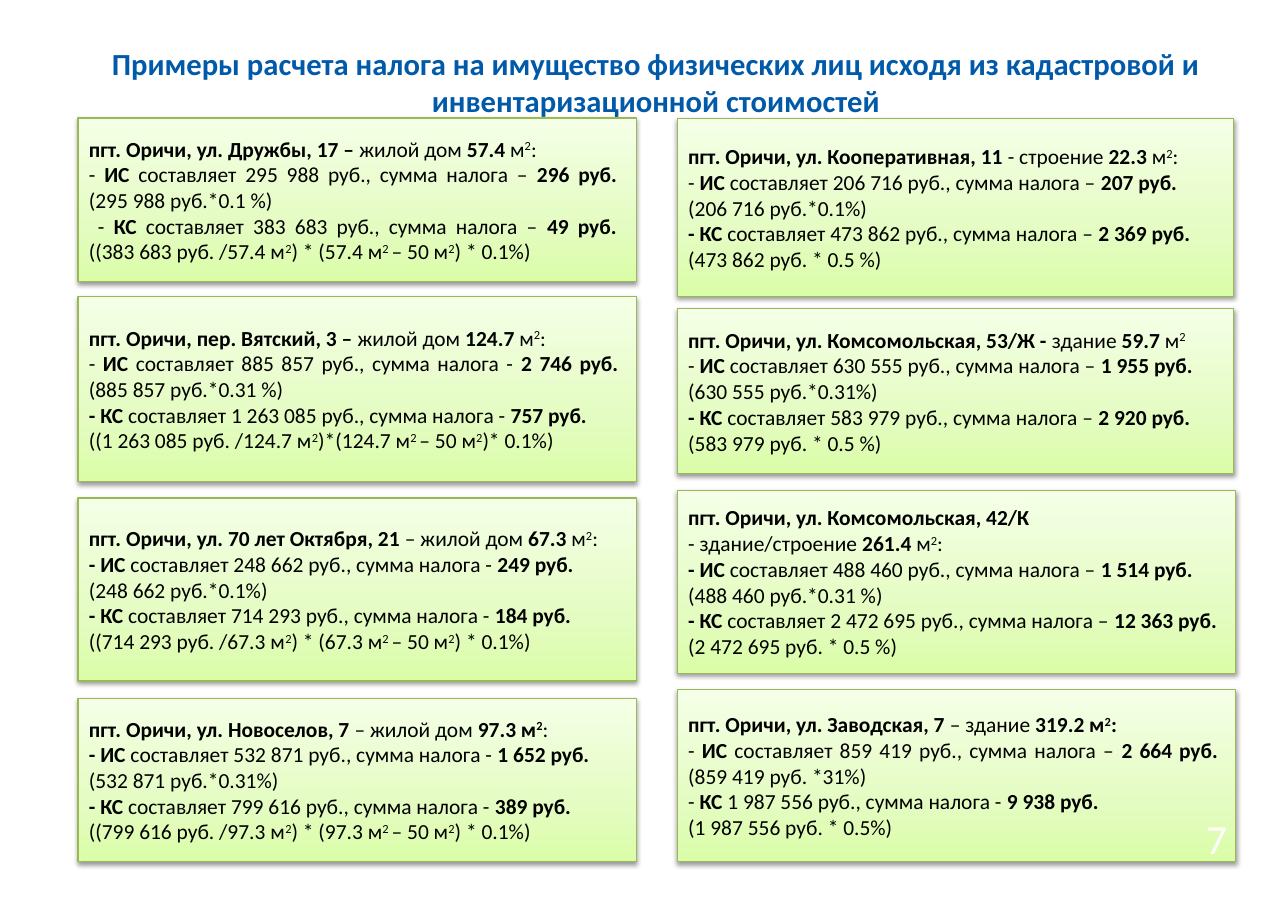
from lxml import etree
from pptx import Presentation
from pptx.dml.color import RGBColor
from pptx.enum import shapes, text
from pptx.oxml import ns
from pptx.util import Cm, Pt

FONT = "Calibri"
GREEN_STOPS = [(0, "DAFDA7"), (35, "E4FCC2"), (100, "F5FFE7")]

# Markup: |bold|, ^superscript^, a leading "<" aligns the paragraph left
LEFT_CARDS = [
    (2.72, 3.78, 12.88, [
        "|пгт. Оричи, ул. Дружбы, 17 – |жилой дом |57.4| м^2^:",
        "- |ИС| составляет 295 988 руб., сумма налога – |296 руб. \n|(295 988 руб.*0.1 %)",
        " - |КС |составляет 383 683 руб., сумма налога – |49 руб. \n|"
        "((383 683 руб. /57.4 м^2^) * (57.4 м^2 ^– 50 м^2^) * 0.1%)",
    ]),
    (6.83, 4.27, 12.88, [
        "|пгт. Оричи, пер. Вятский, 3 – |жилой дом| 124.7| м^2^:",
        "- |ИС| составляет 885 857 руб., сумма налога - |2 746 руб. \n|(885 857 руб.*0.31 %)",
        "|- КС |составляет 1 263 085 руб., сумма налога - |757 руб.|",
        "((1 263 085 руб. /124.7 м^2^)*(124.7 м^2 ^– 50 м^2^)* 0.1%)",
    ]),
    (11.48, 4.22, 12.88, [
        "|пгт. Оричи, ул. 70 лет Октября, 21| – жилой дом |67.3| м^2^:",
        "|- ИС| составляет 248 662 руб., сумма налога - |249 руб.|",
        "(248 662 руб.*0.1%)",
        "|- КС |составляет 714 293 руб., сумма налога - |184 руб.|",
        "((714 293 руб. /67.3 м^2^) * (67.3 м^2 ^– 50 м^2^) * 0.1%)",
    ]),
    (16.1, 3.76, 12.88, [
        "|пгт. Оричи, ул. Новоселов, 7 |– жилой дом |97.3 м^2^|:",
        "|- ИС| составляет 532 871 руб., сумма налога - |1 652 руб.|",
        "(532 871 руб.*0.31%)",
        "|- КС |составляет 799 616 руб., сумма налога - |389 руб.|",
        "((799 616 руб. /97.3 м^2^) * (97.3 м^2 ^– 50 м^2^) * 0.1%)",
    ]),
]
RIGHT_CARDS = [
    (2.74, 4.09, 12.83, [
        "|пгт. Оричи, ул. Кооперативная, 11| - строение |22.3| м^2^:",
        "<- |ИС| составляет 206 716 руб., сумма налога – |207 руб.\n|(206 716 руб.*0.1%)",
        "|- КС |составляет 473 862 руб., сумма налога – |2 369 руб.|",
        "(473 862 руб. * 0.5 %)",
    ]),
    (7.11, 3.81, 12.83, [
        "|пгт. Оричи, ул. Комсомольская, 53/Ж - |здание |59.7 |м^2^",
        "<- |ИС| составляет 630 555 руб., сумма налога – |1 955 руб. \n|(630 555 руб.*0.31%)",
        "|- КС |составляет 583 979 руб., сумма налога – |2 920 руб.|",
        "(583 979 руб. * 0.5 %)",
    ]),
    (11.3, 4.22, 12.88, [
        "|пгт. Оричи, ул. Комсомольская, 42/К|",
        "- здание/строение| 261.4| м^2^:",
        "|- ИС| составляет 488 460 руб., сумма налога – |1 514 руб.|",
        "(488 460 руб.*0.31 %)",
        "|- КС |составляет 2 472 695 руб., сумма налога – |12 363 руб.|",
        "(2 472 695 руб. * 0.5 %)",
    ]),
    (15.9, 3.96, 12.88, [
        "|пгт. Оричи, ул. Заводская, 7 |– здание |319.2 м^2^:|",
        "- |ИС| составляет 859 419 руб., сумма налога – |2 664 руб. \n|(859 419 руб. *31%)",
        "- |КС |1 987 556 руб., сумма налога - |9 938 руб.|",
        "(1 987 556 руб. * 0.5%)",
    ]),
]


def color(hex_code):
    return RGBColor.from_string(hex_code)


def set_attributes(target, **values):
    for name, value in values.items():
        setattr(target, name, value)


def add_run(paragraph, content, size, hex_code, bold=False, raised=False):
    run = paragraph.add_run()
    run.text = content
    set_attributes(run.font, name=FONT, size=Pt(size), bold=bold)
    run.font.color.rgb = color(hex_code)
    if raised:
        run.font._element.set("baseline", "30000")


def add_marked_text(paragraph, marked):
    left = marked.startswith("<")
    paragraph.alignment = text.PP_ALIGN.LEFT if left else text.PP_ALIGN.JUSTIFY
    for bold_index, section in enumerate(marked.lstrip("<").split("|")):
        for raised_index, part in enumerate(section.split("^")):
            for line_index, line in enumerate(part.split("\n")):
                if line_index:
                    paragraph.add_line_break()
                if line:
                    add_run(paragraph, line, 14, "000000",
                            bool(bold_index % 2), bool(raised_index % 2))


def add_gradient(shape):
    shape.fill.gradient()
    shape.fill.gradient_angle = 90
    stop_list = shape._element.spPr.find(ns.qn("a:gradFill")).find(ns.qn("a:gsLst"))
    for stop in list(stop_list):
        stop_list.remove(stop)
    for position, hex_code in GREEN_STOPS:
        stop = etree.SubElement(stop_list, ns.qn("a:gs"), pos=str(position * 1000))
        etree.SubElement(stop, ns.qn("a:srgbClr"), val=hex_code)


def add_shadow(shape):
    shape.shadow.inherit = False
    effects = shape._element.spPr.find(ns.qn("a:effectLst"))
    shadow = etree.SubElement(effects, ns.qn("a:outerShdw"), blurRad="40000",
                              dist="20000", dir="5400000", rotWithShape="0")
    black = etree.SubElement(shadow, ns.qn("a:srgbClr"), val="000000")
    etree.SubElement(black, ns.qn("a:alpha"), val="38000")


def add_card(slide, left, top, width, height, lines):
    shape = slide.shapes.add_shape(shapes.MSO_SHAPE.RECTANGLE, left, top, width, height)
    add_gradient(shape)
    shape.line.color.rgb = color("98B955")
    shape.line.width = Pt(0.75)
    add_shadow(shape)
    frame = shape.text_frame
    set_attributes(frame, word_wrap=True, vertical_anchor=text.MSO_ANCHOR.MIDDLE)
    for index, line in enumerate(lines):
        paragraph = frame.add_paragraph() if index else frame.paragraphs[0]
        add_marked_text(paragraph, line)


def add_card_column(slide, left, cards):
    for top, height, width, lines in cards:
        add_card(slide, Cm(left), Cm(top), Cm(width), Cm(height), lines)


def add_label(slide, box, content, size, hex_code, bold=False, line_spacing=None):
    frame = slide.shapes.add_textbox(*map(Cm, box)).text_frame
    set_attributes(frame, word_wrap=True, vertical_anchor=text.MSO_ANCHOR.MIDDLE,
                   margin_left=Cm(0.28), margin_right=Cm(0.28),
                   margin_top=Cm(0.15), margin_bottom=Cm(0.15))
    paragraph = frame.paragraphs[0]
    set_attributes(paragraph, alignment=text.PP_ALIGN.CENTER, line_spacing=line_spacing)
    add_run(paragraph, content, size, hex_code, bold)


def main():
    presentation = Presentation()
    set_attributes(presentation, slide_width=Cm(29.7), slide_height=Cm(21))
    slide = presentation.slides.add_slide(presentation.slide_layouts[6])

    # Title
    add_label(slide, (1.32, 1.09, 27.61, 1.6),
              "Примеры расчета налога на имущество физических лиц исходя из "
              "кадастровой и инвентаризационной стоимостей", 20, "005AA9", bold=True)

    # Houses on the left, other buildings on the right
    add_card_column(slide, 1.8, LEFT_CARDS)
    add_card_column(slide, 15.62, RIGHT_CARDS)

    # Page number
    add_label(slide, (27.05, 18.49, 2.01, 1.93), "7", 27, "FFFFFF", line_spacing=Pt(24))

    presentation.save("out.pptx")


if __name__ == "__main__":
    main()
